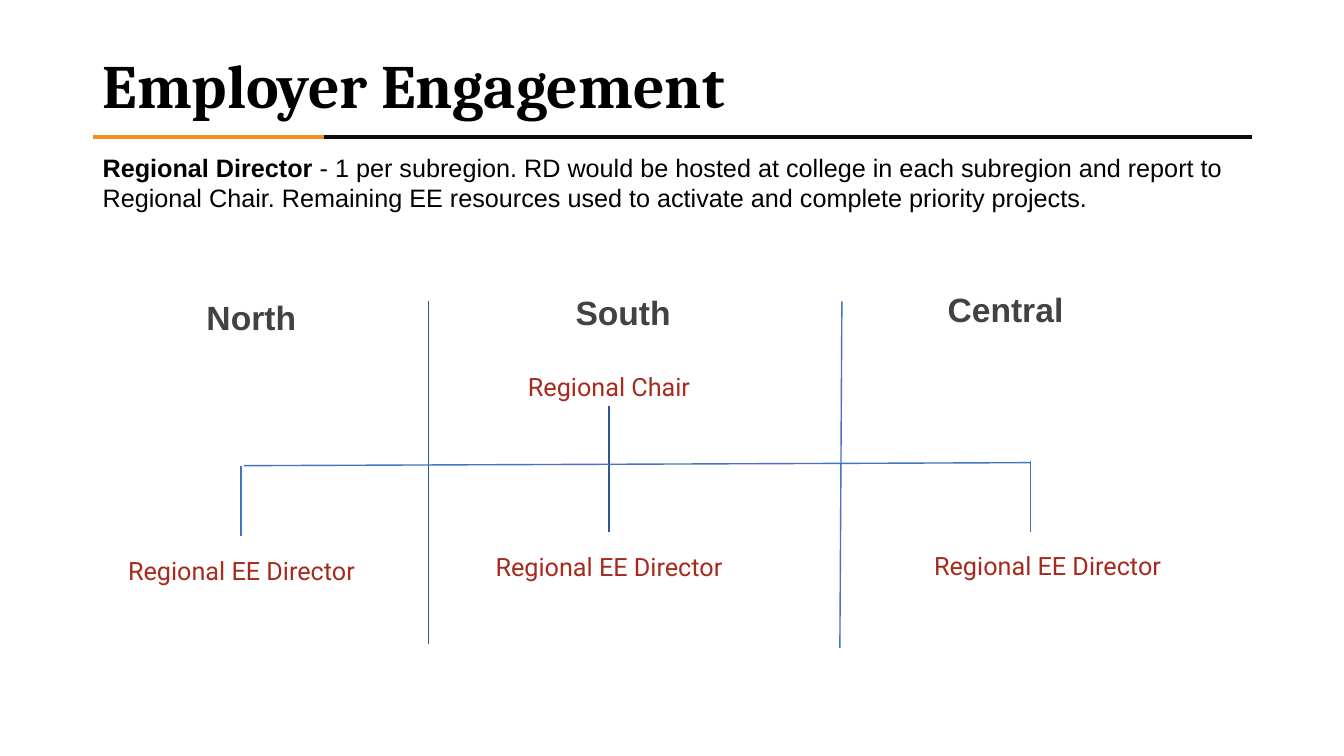
"""Build the Employer Engagement regional structure slide."""
from lxml import etree
from pptx import Presentation
from pptx.dml.color import RGBColor
from pptx.enum import shapes, text
from pptx.oxml import ns
from pptx.util import Inches, Pt

BLACK = RGBColor(0x00, 0x00, 0x00)
RULE_BLACK = RGBColor(0x0D, 0x0D, 0x0D)
ORANGE = RGBColor(0xF5, 0x8C, 0x1F)
GREY = RGBColor(0x42, 0x42, 0x42)
RED = RGBColor(0xA7, 0x2A, 0x1E)
BLUE = RGBColor(0x44, 0x72, 0xC4)
DARK_BLUE = RGBColor(0x2F, 0x55, 0x97)

prs = Presentation()
prs.slide_width, prs.slide_height = Inches(13.33), Inches(7.5)
s = prs.slides.add_slide(prs.slide_layouts[6])


def add_text(box, runs, font, size, color, align=text.PP_ALIGN.LEFT):
    """Add a one-paragraph text box; runs are (wording, bold) pairs."""
    tf = s.shapes.add_textbox(*map(Inches, box)).text_frame
    tf.word_wrap = True
    p = tf.paragraphs[0]
    p.alignment = align
    for wording, bold in runs:
        r = p.add_run()
        r.text = wording
        r.font.name, r.font.size, r.font.bold = font, Pt(size), bold
        r.font.color.rgb = color
    return tf


def add_line(x1, y1, x2, y2, color, width=1):
    """Add a straight line without a shadow."""
    ln = s.shapes.add_connector(
        shapes.MSO_CONNECTOR.STRAIGHT, *map(Inches, (x1, y1, x2, y2)))
    ln.line.color.rgb = color
    ln.line.width = Pt(width)
    etree.SubElement(ln._element.spPr, ns.qn("a:effectLst"))


title = add_text((0.92, 0.4, 11.5, 0.96), [("Employer Engagement", True)],
                 "Cambria", 44, BLACK)
title.vertical_anchor = text.MSO_ANCHOR.MIDDLE
title.paragraphs[0].line_spacing = 0.9

add_line(0.92, 1.36, 9.24, 1.36, ORANGE, 3)
add_line(3.21, 1.36, 12.42, 1.36, RULE_BLACK, 3)

add_text((0.92, 1.46, 11.83, 0.71), [
    ("Regional Director ", True),
    ("- 1 per subregion. RD would be hosted at college in each subregion and "
     "report to Regional Chair. Remaining EE resources used to activate and "
     "complete priority projects.", False),
], "Arial", 18, BLACK)

regions = [
    ("North", (1.95, 2.9, 1.23, 1.11), (0.15, 5.46, 4.49, 1.01)),
    ("South", (5.61, 2.85, 1.31, 1.11), (3.39, 5.42, 5.3, 1.01)),
    ("Central", (9.3, 2.82, 2.23, 1.11), (7.74, 5.41, 5.3, 1.01)),
]
for region, heading_box, director_box in regions:
    add_text(heading_box, [(region, True)], "Arial", 24, GREY)
    add_text(director_box, [("Regional EE Director", False)],
             "Roboto", 18, RED, text.PP_ALIGN.CENTER)
add_text((2.19, 3.63, 7.7, 0.4), [("Regional Chair", False)],
         "Roboto", 18, RED, text.PP_ALIGN.CENTER)

for x1, y1, x2, y2, color in [
    (6.04, 5.28, 6.04, 4.03, DARK_BLUE),
    (8.33, 6.43, 8.35, 2.99, BLUE),
    (4.25, 6.39, 4.25, 2.99, DARK_BLUE),
    (10.22, 5.28, 10.22, 4.57, BLUE),
    (10.22, 4.59, 2.42, 4.62, BLUE),
    (2.39, 5.32, 2.39, 4.62, BLUE),
]:
    add_line(x1, y1, x2, y2, color)

prs.save("out.pptx")
